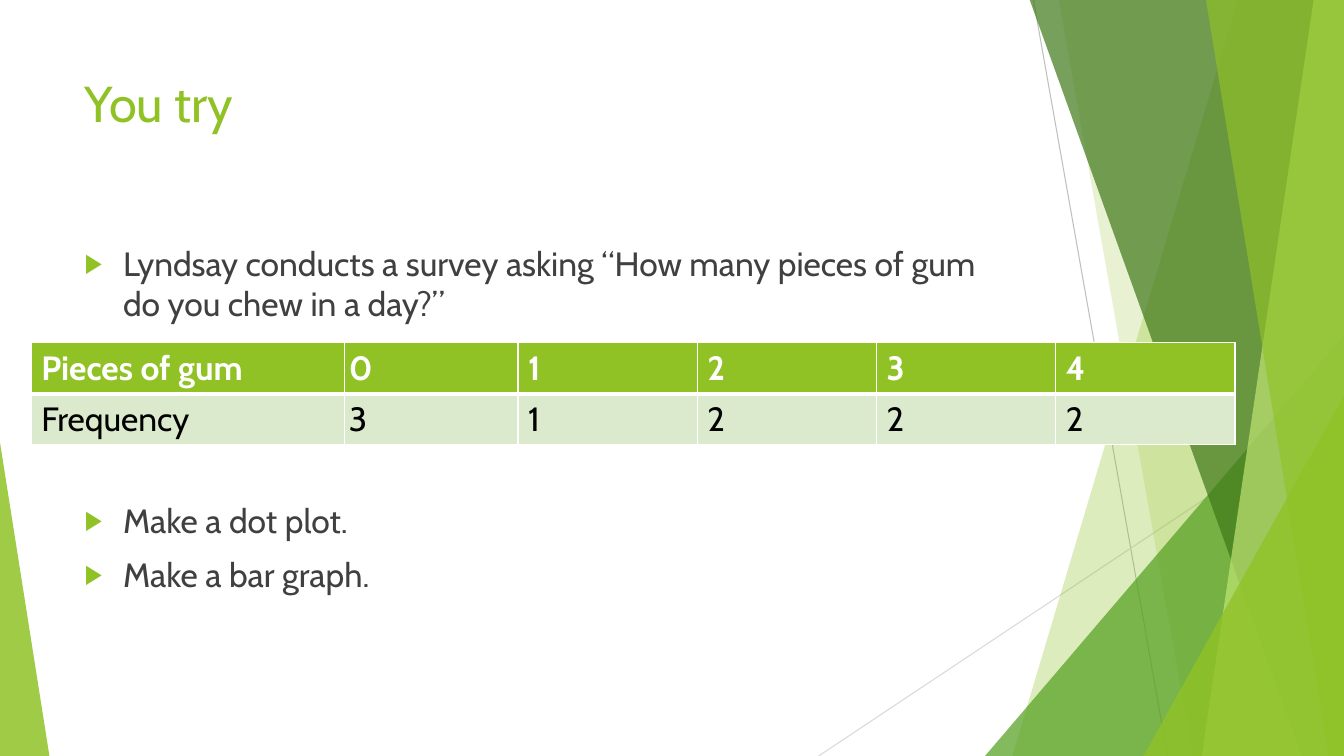
from lxml.etree import SubElement as Sub
from pptx import Presentation
from pptx.dml.color import RGBColor
from pptx.enum.shapes import MSO_CONNECTOR as Link, MSO_SHAPE as Form
from pptx.enum.text import MSO_ANCHOR as Anchor, MSO_AUTO_SIZE as Auto, PP_ALIGN as Align
from pptx.oxml.ns import qn
from pptx.util import Inches, Pt

LIME = RGBColor(0x90, 0xC2, 0x26)
GREEN = RGBColor(0x54, 0xA0, 0x21)
DARK = RGBColor(0x3F, 0x78, 0x19)
PALE = RGBColor(0xC0, 0xE4, 0x74)
MINT = RGBColor(0xDB, 0xE9, 0xCD)
INK = RGBColor(0x40, 0x40, 0x40)
BLACK = RGBColor(0, 0, 0)
WHITE = RGBColor(0xFF, 0xFF, 0xFF)
GREY = RGBColor(0xBF, 0xBF, 0xBF)
SILVER = RGBColor(0xD9, 0xD9, 0xD9)

WIDE, HIGH = 13.33, 7.5
HEAD = {"name": "Cabin", "size": Pt(36), "bold": False, "color": LIME}
BODY = {"name": "Cabin", "size": Pt(24), "bold": False, "color": INK}
TOP = {**BODY, "bold": True, "color": WHITE}
CELL = {**BODY, "color": BLACK}


def style(font, form):
    """Set the font attributes from a dict of format values."""
    for key, value in form.items():
        if key == "color":
            font.color.rgb = value
        else:
            setattr(font, key, value)


def place(shape, box):
    """Move a shape to a box of inches."""
    for key, value in zip(("left", "top", "width", "height"), box):
        setattr(shape, key, Inches(value))


def paint(shape, color, alpha):
    """Fill a shape with a see-through colour and no line."""
    shape.shadow.inherit = False
    shape.line.fill.background()
    shape.fill.solid()
    shape.fill.fore_color.rgb = color
    tint = shape.element.spPr.find(qn("a:solidFill"))[0]
    Sub(tint, qn("a:alpha"), val=str(alpha * 1000))


def rule(slide, start, end, color):
    """Draw a thin line between two points."""
    line = slide.shapes.add_connector(Link.STRAIGHT, *map(Inches, start + end))
    line.line.color.rgb = color
    line.line.width = Pt(0.75)
    Sub(line.element.spPr, qn("a:effectLst"))


def band(slide, box, upper, lower, color, alpha):
    """Draw a band from a slanted edge to the right side of the box."""
    left, top, width, height = box
    right, base = left + width, top + height
    spots = [(upper, top), (right, top), (right, base), (lower, base)]
    spots = [tuple(map(Inches, spot)) for spot in spots]
    pen = slide.shapes.build_freeform(*spots[0])
    pen.add_line_segments(spots[1:], close=True)
    paint(pen.convert_to_shape(), color, alpha)


def wedge(slide, box, peak, color, alpha):
    """Draw a triangle whose tip is at one side of the box."""
    shape = slide.shapes.add_shape(Form.ISOSCELES_TRIANGLE, *map(Inches, box))
    shape.adjustments[0] = peak
    paint(shape, color, alpha)


def decor(slide, box):
    """Draw the facets along the slide edges."""
    left, top, width, height = box
    right, base = left + width, top + height
    rule(slide, (10.25, top), (11.58, base), GREY)
    rule(slide, (right, 4.03), (8.12, base), SILVER)
    pane = (left, top - 0.01, width, height + 0.01)
    band(slide, pane, 12.28, 10.04, LIME, 30)
    band(slide, pane, 10.5, 11.83, LIME, 20)
    wedge(slide, (right - 3.56, base - 4.17, 3.56, 4.17), 1, GREEN, 72)
    for upper, lower, color, alpha in (
        (10.21, 12.91, DARK, 70),
        (13.03, 11.92, PALE, 70),
        (11.96, 13.18, LIME, 65),
    ):
        band(slide, pane, upper, lower, color, alpha)
    wedge(slide, (right - 1.99, base - 3.57, 1.99, 3.57), 1, LIME, 80)
    wedge(slide, (left, base - 3.11, 0.49, 3.11), 0, LIME, 85)


def write(slide, shape, box, lines, form):
    """Fill a placeholder with lines and bring it to the front."""
    place(shape, box)
    slide.shapes.element.append(shape.element)
    frame = shape.text_frame
    frame.text = "\n".join(lines)
    for key, value in {"word_wrap": True, "auto_size": Auto.NONE,
                       "vertical_anchor": Anchor.TOP}.items():
        setattr(frame, key, value)
    for para in frame.paragraphs:
        para.alignment = Align.LEFT
        style(para.runs[0].font, form)
    return frame.paragraphs


def bullet(para, space):
    """Give a paragraph a green arrow bullet and space before it."""
    para.space_before = Pt(space)
    props = para._p.get_or_add_pPr()
    props.set("marL", str(Inches(0.38)))
    props.set("indent", str(-Inches(0.38)))
    Sub(Sub(props, qn("a:buClr")), qn("a:srgbClr"), val=str(LIME))
    Sub(props, qn("a:buSzPct"), val="80000")
    Sub(props, qn("a:buChar"), char="▶")


def edge(cell, sides):
    """Draw white borders of the given widths around a cell."""
    props = cell._tc.get_or_add_tcPr()
    for side, width in sides.items():
        line = Sub(props, qn("a:ln" + side), w=str(Pt(width)))
        Sub(Sub(line, qn("a:solidFill")), qn("a:srgbClr"), val=str(WHITE))


def grid(slide, box, rows):
    """Draw a table with a green head row and a pale second row."""
    frame = slide.shapes.add_table(len(rows), len(rows[0]), *map(Inches, box))
    table = frame.table
    table.horz_banding = False
    looks = ((TOP, LIME, {"L": 1, "R": 1, "T": 1, "B": 3}),
             (CELL, MINT, {"L": 1, "R": 1, "T": 3, "B": 1}))
    for r, (row, (form, color, sides)) in enumerate(zip(rows, looks)):
        for c, word in enumerate(row):
            cell = table.cell(r, c)
            cell.text = word
            style(cell.text_frame.paragraphs[0].runs[0].font, form)
            edge(cell, sides)
            cell.fill.solid()
            cell.fill.fore_color.rgb = color


def task(slide, box):
    """Build the exercise slide in the given box."""
    left, top = box[:2]
    title, body = slide.placeholders
    decor(slide, box)
    write(slide, title, (left + 0.74, top + 0.67, 9.4, 1.44), ["You try"], HEAD)
    lines = ["Lyndsay conducts a survey asking “How many pieces of gum do you chew in a day?”",
             "Make a dot plot.", "Make a bar graph."]
    paras = write(slide, body, (left + 0.74, top + 2.36, 9.4, 4.24), lines, BODY)
    for para, space in zip(paras, (10, 126, 10)):
        bullet(para, space)
    grid(slide, (left + 3.36, top + 3.4, 8.89, 1), ["01234", "31222"])
    grid(slide, (left + 0.31, top + 3.4, 3.11, 1), [["Pieces of gum"], ["Frequency"]])


def main():
    """Make the deck and save it."""
    deck = Presentation()
    deck.slide_width, deck.slide_height = Inches(WIDE), Inches(HIGH)
    task(deck.slides.add_slide(deck.slide_layouts[1]), (0, 0, WIDE, HIGH))
    deck.save("out.pptx")


if __name__ == "__main__":
    main()
